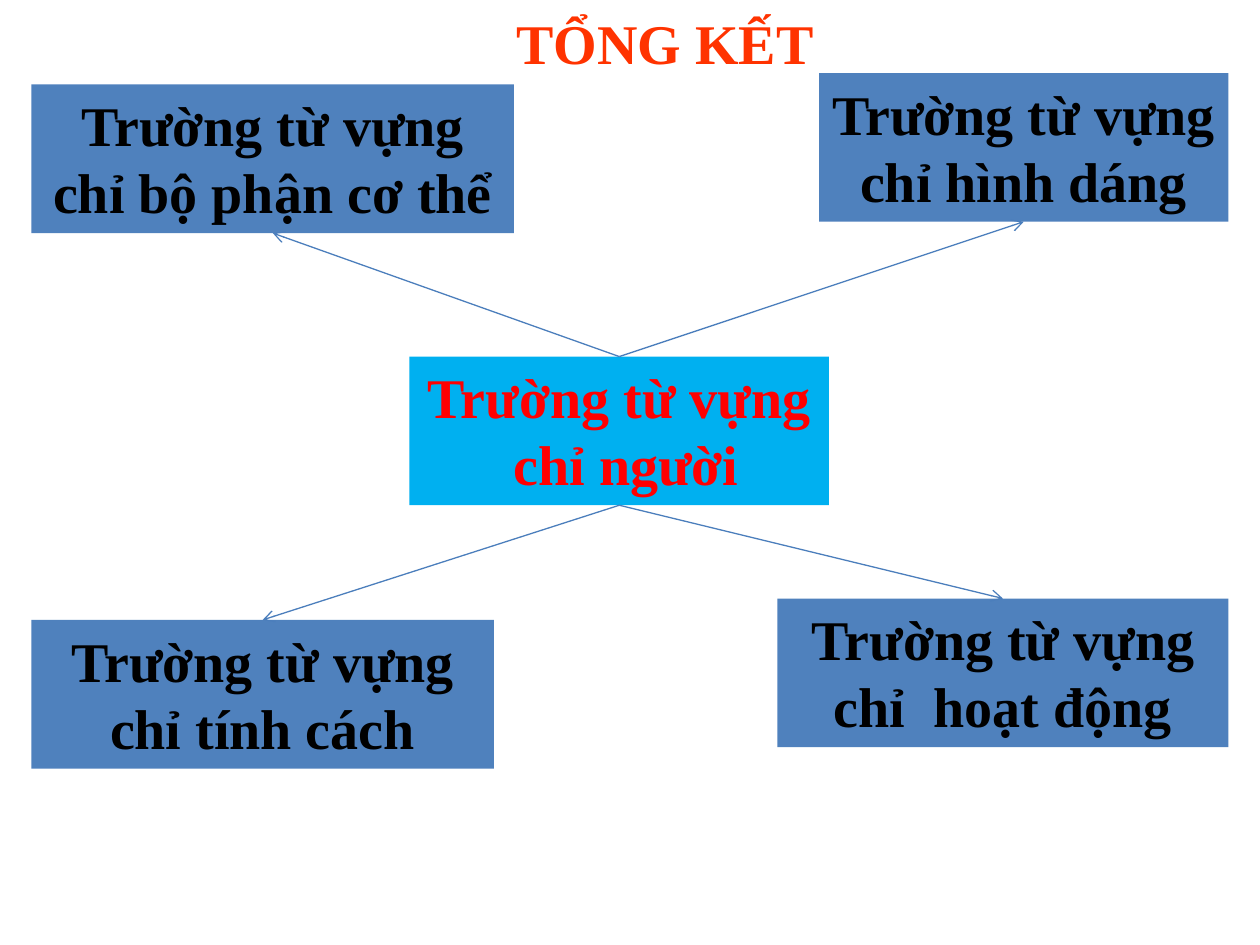
import pptx
import pptx.dml.color
import pptx.enum.shapes
import pptx.enum.text
import pptx.oxml.ns
import pptx.util
from lxml import etree
from pptx.util import Inches

RGBColor = pptx.dml.color.RGBColor
BLACK = RGBColor(0x00, 0x00, 0x00)
RED = RGBColor(0xFF, 0x00, 0x00)
ORANGE = RGBColor(0xFF, 0x33, 0x00)
SKY = RGBColor(0x00, 0xB0, 0xF0)
BLUE = RGBColor(0x4F, 0x81, 0xBD)
ARROW_BLUE = RGBColor(0x4B, 0x7E, 0xBC)

BOX_HEIGHT = 1.18
TOP_SITE, BOTTOM_SITE = 0, 2


class MindMap:
    font = "Times New Roman"
    size = pptx.util.Pt(32)
    line_width = pptx.util.Pt(0.75)

    def __init__(self, slide):
        self.slide = slide

    def add_lines(self, frame, lines, color, align):
        for index, line in enumerate(lines):
            para = frame.paragraphs[0] if index == 0 else frame.add_paragraph()
            para.alignment = align
            span = para.add_run()
            span.text = line
            span.font.name = self.font
            span.font.size = self.size
            span.font.bold = True
            span.font.color.rgb = color

    def title(self, text, left, top, width, height):
        box = self.slide.shapes.add_textbox(
            Inches(left), Inches(top), Inches(width), Inches(height))
        frame = box.text_frame
        frame.word_wrap = False
        frame.vertical_anchor = pptx.enum.text.MSO_ANCHOR.MIDDLE
        self.add_lines(frame, [text], ORANGE, pptx.enum.text.PP_ALIGN.LEFT)

    def topic(self, lines, left, top, width, fill=BLUE, color=BLACK):
        box = self.slide.shapes.add_shape(
            pptx.enum.shapes.MSO_SHAPE.RECTANGLE,
            Inches(left), Inches(top), Inches(width), Inches(BOX_HEIGHT))
        box.shadow.inherit = False
        box.fill.solid()
        box.fill.fore_color.rgb = fill
        box.line.fill.background()
        frame = box.text_frame
        frame.word_wrap = True
        frame.auto_size = pptx.enum.text.MSO_AUTO_SIZE.SHAPE_TO_FIT_TEXT
        frame.vertical_anchor = pptx.enum.text.MSO_ANCHOR.TOP
        self.add_lines(frame, lines, color, pptx.enum.text.PP_ALIGN.CENTER)
        return box

    def arrow(self, start, end):
        """Join two topics, leaving start on the side that faces end."""
        upward = end.top < start.top
        connector = self.slide.shapes.add_connector(
            pptx.enum.shapes.MSO_CONNECTOR.STRAIGHT, 0, 0, 0, 0)
        connector.begin_connect(start, TOP_SITE if upward else BOTTOM_SITE)
        connector.end_connect(end, BOTTOM_SITE if upward else TOP_SITE)
        connector.line.color.rgb = ARROW_BLUE
        connector.line.width = self.line_width
        qn = pptx.oxml.ns.qn
        properties = connector._element.spPr
        etree.SubElement(properties.find(qn("a:ln")), qn("a:tailEnd"), type="arrow")
        etree.SubElement(properties, qn("a:effectLst"))


def main():
    deck = pptx.Presentation()
    deck.slide_width = Inches(10)
    deck.slide_height = Inches(7.5)
    page = MindMap(deck.slides.add_slide(deck.slide_layouts[6]))

    center = page.topic(["Trường từ vựng", " chỉ người"],
                        3.25, 2.83, 3.33, SKY, RED)
    branches = [
        ("Trường từ vựng chỉ bộ phận cơ thể", 0.25, 0.67, 3.83),
        ("Trường từ vựng chỉ hình dáng", 6.5, 0.58, 3.25),
        ("Trường từ vựng chỉ tính cách", 0.25, 4.92, 3.67),
        ("Trường từ vựng chỉ  hoạt động", 6.17, 4.75, 3.58),
    ]
    topics = [page.topic([text], *place) for text, *place in branches]
    for topic in topics:
        page.arrow(center, topic)
    page.title("TỔNG KẾT", 4, -0.33, 4.25, 1.33)

    deck.save("out.pptx")


if __name__ == "__main__":
    main()
